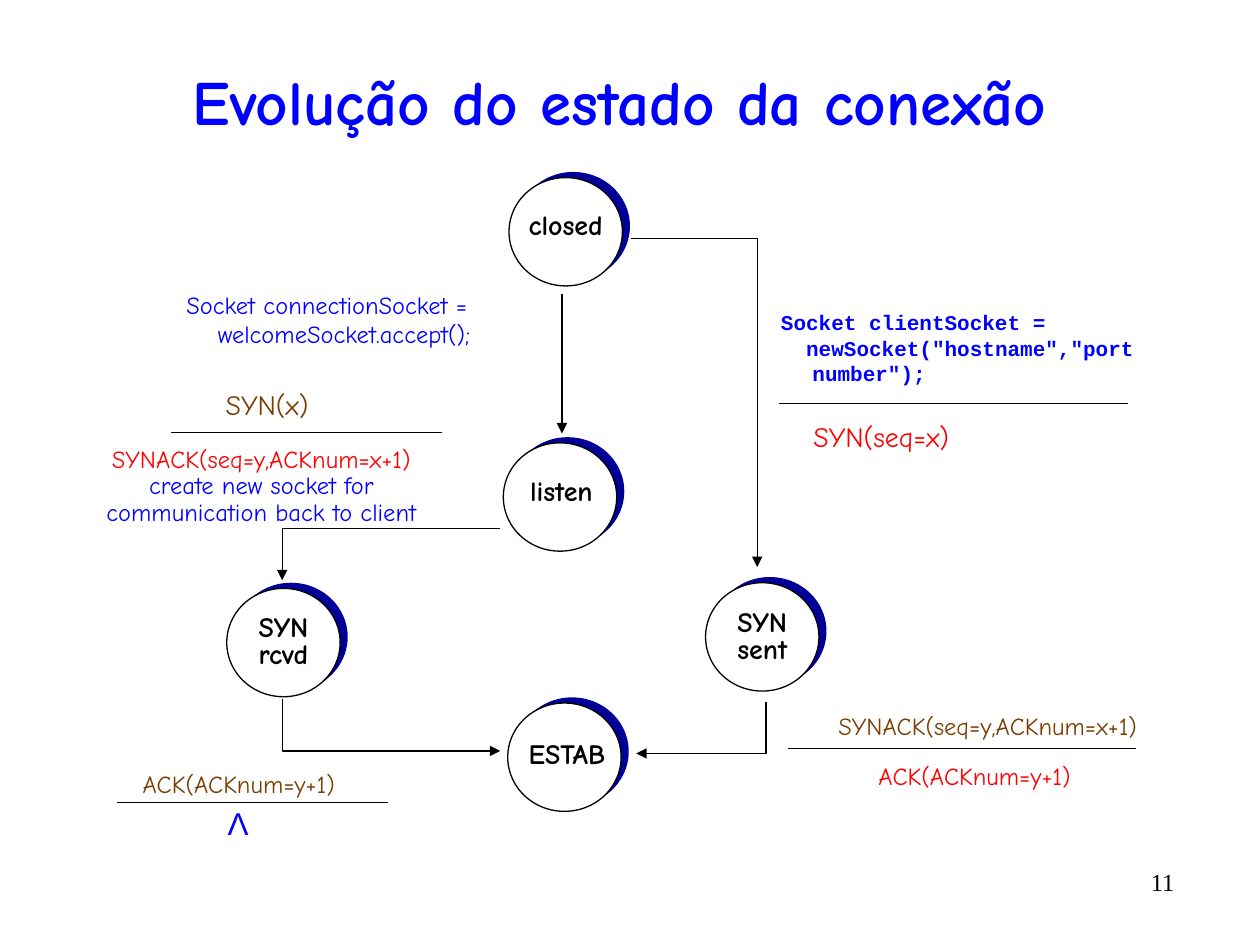
from lxml.etree import SubElement
from pptx import Presentation
from pptx.dml.color import RGBColor
from pptx.enum.shapes import MSO_CONNECTOR, MSO_SHAPE
from pptx.enum.text import MSO_ANCHOR, MSO_AUTO_SIZE, PP_ALIGN
from pptx.oxml.ns import qn
from pptx.util import Inches, Pt

COLORS = {
    "blue": "0000FF",
    "navy": "000099",
    "red": "FF0000",
    "brown": "7A3D00",
    "black": "000000",
    "white": "FFFFFF",
}
COLUMNS, ROWS = 100, 75  # grid over the 10 by 7.5 inch slide
CIRCLE_WIDTH, CIRCLE_HEIGHT = 9, 8.6


class StateDiagram:
    """Holds the style and the current slide; lengths are grid columns and rows."""

    font = "Comic Neue"
    line_width = Pt(0.75)

    def __init__(self, presentation):
        self.column = presentation.slide_width / COLUMNS
        self.row = presentation.slide_height / ROWS
        self.slide = presentation.slides.add_slide(presentation.slide_layouts[5])

    def point(self, left, top):
        return round(left * self.column), round(top * self.row)

    def color(self, name):
        return RGBColor.from_string(COLORS[name])

    def format(self, paragraph, size, color, bold=False, font=None,
               align=PP_ALIGN.CENTER, spacing=1.0):
        paragraph.alignment = align
        paragraph.line_spacing = spacing
        for run in paragraph.runs:
            run.font.name = font or self.font
            run.font.size = Pt(size)
            run.font.bold = bold
            run.font.color.rgb = self.color(color)

    def title(self, text, left, top, width, height):
        shape = self.slide.shapes.title
        shape.left, shape.top = self.point(left, top)
        shape.width, shape.height = self.point(width, height)
        frame = shape.text_frame
        frame.text = text
        frame.auto_size = MSO_AUTO_SIZE.NONE
        frame.vertical_anchor = MSO_ANCHOR.MIDDLE
        self.format(frame.paragraphs[0], 36, "blue", bold=True)

    def text(self, lines, left, top, width, height, colors, size=14,
             wrap=False, indents=(), **style):
        """Add one paragraph per line; colors is one name or one per line."""
        box = self.slide.shapes.add_textbox(*self.point(left, top), *self.point(width, height))
        frame = box.text_frame
        frame.word_wrap = wrap
        frame.text = "\n".join(lines)
        names = [colors] * len(lines) if isinstance(colors, str) else colors
        for paragraph, name in zip(frame.paragraphs, names):
            self.format(paragraph, size, name, **style)
        for paragraph, indent in zip(frame.paragraphs, indents):
            properties = paragraph._p.get_or_add_pPr()
            properties.set("marL", str(Inches(0.25)))
            properties.set("indent", str(Inches(indent)))

    def circle(self, left, top, fill, outline=False):
        shape = self.slide.shapes.add_shape(
            MSO_SHAPE.OVAL, *self.point(left, top), *self.point(CIRCLE_WIDTH, CIRCLE_HEIGHT))
        shape.shadow.inherit = False
        shape.fill.solid()
        shape.fill.fore_color.rgb = self.color(fill)
        if outline:
            self.stroke(shape)
        else:
            shape.line.fill.background()

    def state(self, lines, left, top, text_left, text_top, text_width, spacing=1.0):
        self.circle(left + 0.6, top - 0.45, "navy")
        self.circle(left, top, "white", outline=True)
        self.text(lines, text_left, text_top, text_width, 1 + 2.7 * len(lines), "black",
                  size=16, bold=True, spacing=spacing)

    def stroke(self, shape, arrow=False):
        shape.line.color.rgb = self.color("black")
        shape.line.width = self.line_width
        if arrow:
            SubElement(shape.line._get_or_add_ln(), qn("a:tailEnd"), type="triangle")

    def line(self, start, end, arrow=False):
        connector = self.slide.shapes.add_connector(
            MSO_CONNECTOR.STRAIGHT, *self.point(*start), *self.point(*end))
        self.stroke(connector, arrow)
        SubElement(connector._element.spPr, qn("a:effectLst"))

    def bent_arrow(self, start, corner, end):
        builder = self.slide.shapes.build_freeform(*self.point(*start))
        builder.add_line_segments([self.point(*corner), self.point(*end)], close=False)
        shape = builder.convert_to_shape()
        shape.shadow.inherit = False
        shape.fill.background()
        self.stroke(shape, arrow=True)


def main():
    presentation = Presentation()
    presentation.slide_width, presentation.slide_height = Inches(10), Inches(7.5)
    diagram = StateDiagram(presentation)

    # Title and slide number
    diagram.title("Evolução do estado da conexão", 3.3, 4.2, 91.7, 7.5)
    diagram.text(["11"], 84.2, 68.3, 10, 4.2, "black", wrap=True,
                 font="Times New Roman", align=PP_ALIGN.RIGHT)

    # States
    diagram.state(["closed"], 40.4, 14.1, 40.6, 16, 8.6)
    diagram.state(["listen"], 39.95, 35.15, 40.6, 37.1, 7.9)
    diagram.state(["SYN", "rcvd"], 18, 46.7, 19.1, 48.4, 6.8, spacing=0.8)
    diagram.state(["SYN", "sent"], 56, 46.25, 57.1, 48, 6.8, spacing=0.8)
    diagram.state(["ESTAB"], 40.3, 55.8, 40.2, 58.5, 9.6, spacing=0.8)

    # Transitions
    diagram.line((44.6, 23.3), (44.6, 34.4), arrow=True)
    diagram.bent_arrow((50.1, 18.9), (60.1, 18.9), (60.1, 45))
    diagram.bent_arrow((39.7, 41.95), (22.4, 41.95), (22.4, 46.05))
    diagram.bent_arrow((22.4, 55.5), (22.4, 59.6), (39.7, 59.6))
    diagram.bent_arrow((60.8, 55.7), (60.8, 59.8), (50.5, 59.8))

    # Rules between the event and the action of a transition
    for left, right, top in ((61.8, 89.5, 32), (13.6, 35.1, 34.3),
                             (62.5, 90.2, 59.4), (9.3, 30.8, 63.7)):
        diagram.line((left, top), (right, top))

    # Client side labels
    diagram.text(["Socket clientSocket =", 'newSocket("hostname","port number");'],
                 61, 24.1, 31.6, 7.1, "blue", size=12, wrap=True, bold=True,
                 font="Courier New", align=PP_ALIGN.LEFT, indents=(-0.25, -0.05))
    diagram.text(["SYN(seq=x)"], 62.6, 32.8, 14.7, 3.7, "red", size=16)
    diagram.text(["SYNACK(seq=y,ACKnum=x+1)"], 64.2, 56.2, 28.4, 3.2, "brown", spacing=0.9)
    diagram.text(["ACK(ACKnum=y+1)"], 68.1, 60.2, 18.5, 3.2, "red", spacing=0.9)

    # Server side labels
    diagram.text(["Socket connectionSocket = welcomeSocket.accept();"],
                 13.8, 22.5, 28.2, 5.7, "blue", wrap=True,
                 align=PP_ALIGN.LEFT, indents=(-0.25,))
    diagram.text(["SYN(x)"], 16.3, 30.3, 9.8, 3.7, "brown", size=16)
    diagram.text(["SYNACK(seq=y,ACKnum=x+1)", "create new socket for",
                  "communication back to client"],
                 6.5, 35, 28.5, 7.1, ("red", "blue", "blue"), spacing=0.9)
    diagram.text(["ACK(ACKnum=y+1)"], 9.7, 60.8, 18.5, 3.2, "brown", spacing=0.9)
    diagram.text(["Λ"], 17, 63.3, 3.8, 4, "blue", size=18, font="Arial")

    presentation.save("out.pptx")


if __name__ == "__main__":
    main()
